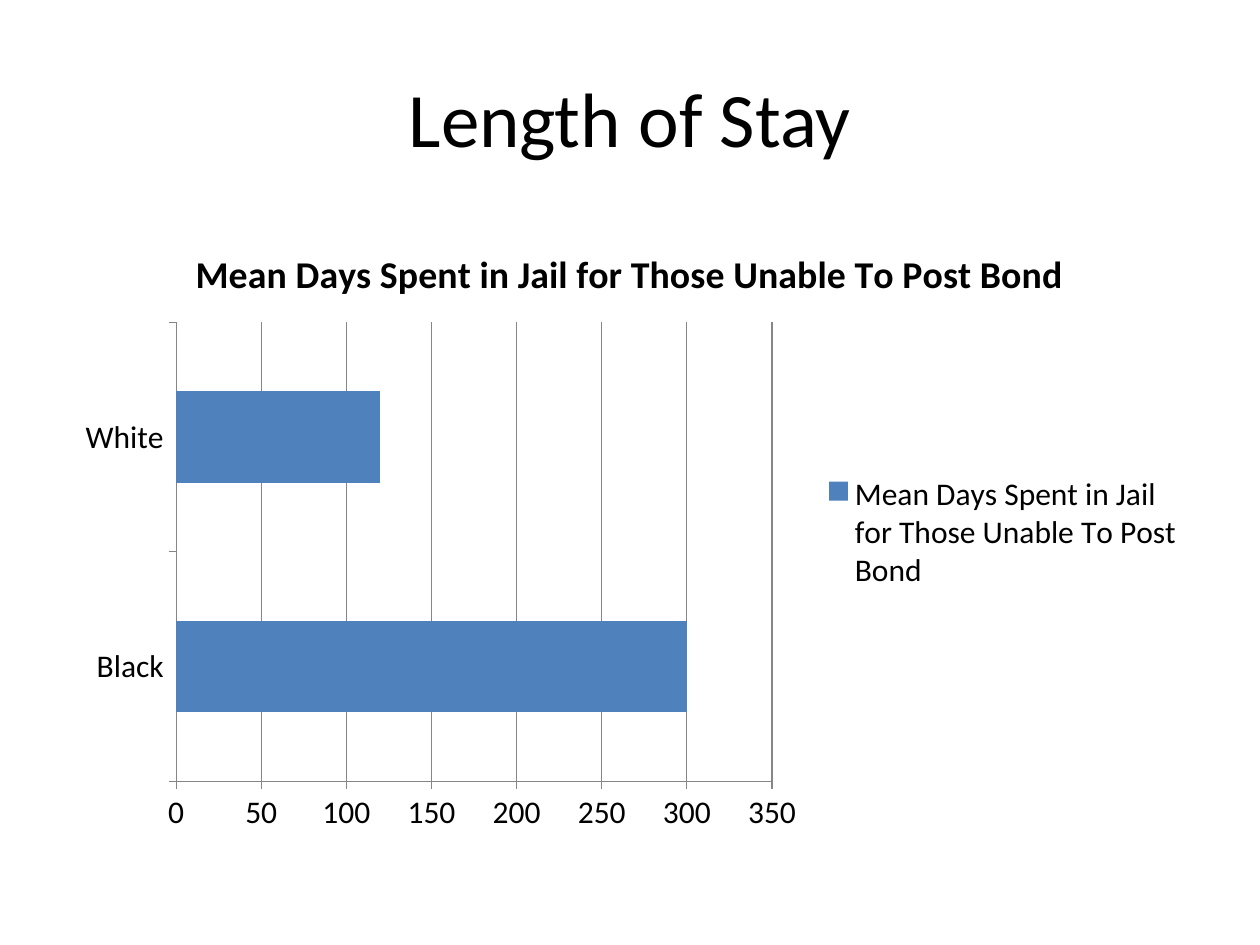
from pptx import Presentation
from pptx.chart.data import CategoryChartData
from pptx.dml.color import RGBColor
from pptx.enum.chart import XL_CHART_TYPE, XL_LEGEND_POSITION, XL_TICK_MARK
from pptx.enum.text import MSO_ANCHOR, PP_ALIGN
from pptx.util import Cm, Pt

BAR_STACKED = XL_CHART_TYPE.BAR_STACKED
LEGEND_RIGHT = XL_LEGEND_POSITION.RIGHT
TICK_OUTSIDE = XL_TICK_MARK.OUTSIDE
MIDDLE = MSO_ANCHOR.MIDDLE
CENTER = PP_ALIGN.CENTER

COLORS = {"text": "000000", "bar": "4F81BD", "axis": "868686"}
FONT = "Calibri"
TITLE_ONLY = 5


class SlideBuilder:
    def __init__(self, slide):
        self.slide = slide

    def color(self, name):
        return RGBColor.from_string(COLORS[name])

    def style_font(self, font, size, bold=False):
        font.name = FONT
        font.size = Pt(size)
        font.bold = bold
        font.color.rgb = self.color("text")

    def style_line(self, line):
        line.color.rgb = self.color("axis")
        line.width = Pt(0.75)

    def title(self, text, left, top, width, height):
        title = self.slide.shapes.title
        title.left, title.top = Cm(left), Cm(top)
        title.width, title.height = Cm(width), Cm(height)
        frame = title.text_frame
        frame.text = text
        frame.vertical_anchor = MIDDLE
        heading = frame.paragraphs[0]
        heading.alignment = CENTER
        self.style_font(heading.runs[0].font, 44)

    def bar_chart(self, heading, values, left, top, width, height):
        data = CategoryChartData()
        data.categories = list(values)
        data.add_series(heading, list(values.values()))
        chart = self.slide.shapes.add_chart(
            BAR_STACKED, Cm(left), Cm(top), Cm(width), Cm(height), data
        ).chart
        self.style_font(chart.font, 18)

        chart.has_title = True
        chart.chart_title.include_in_layout = False
        chart_heading = chart.chart_title.text_frame
        chart_heading.text = heading
        self.style_font(chart_heading.paragraphs[0].runs[0].font, 21.6, bold=True)

        chart.has_legend = True
        chart.legend.position = LEGEND_RIGHT
        chart.legend.include_in_layout = False

        for axis in (chart.category_axis, chart.value_axis):
            axis.major_tick_mark = TICK_OUTSIDE
            self.style_line(axis.format.line)
        chart.value_axis.has_major_gridlines = True
        self.style_line(chart.value_axis.major_gridlines.format.line)
        chart.value_axis.minimum_scale = 0
        chart.value_axis.maximum_scale = 350
        chart.value_axis.major_unit = 50

        plot = chart.plots[0]
        plot.gap_width = 150
        plot.overlap = 100
        plot.vary_by_categories = False
        bars = plot.series[0].format.fill
        bars.solid()
        bars.fore_color.rgb = self.color("bar")


def main():
    presentation = Presentation()
    presentation.slide_width, presentation.slide_height = Cm(25.4), Cm(19.05)
    layout = presentation.slide_layouts[TITLE_ONLY]
    builder = SlideBuilder(presentation.slides.add_slide(layout))
    builder.title("Length of Stay", 1.27, 0.76, 22.86, 3.18)
    builder.bar_chart(
        "Mean Days Spent in Jail for Those Unable To Post Bond",
        {"Black": 300, "White": 120},
        1.27, 4.45, 22.86, 12.57,
    )
    presentation.save("out.pptx")


if __name__ == "__main__":
    main()
